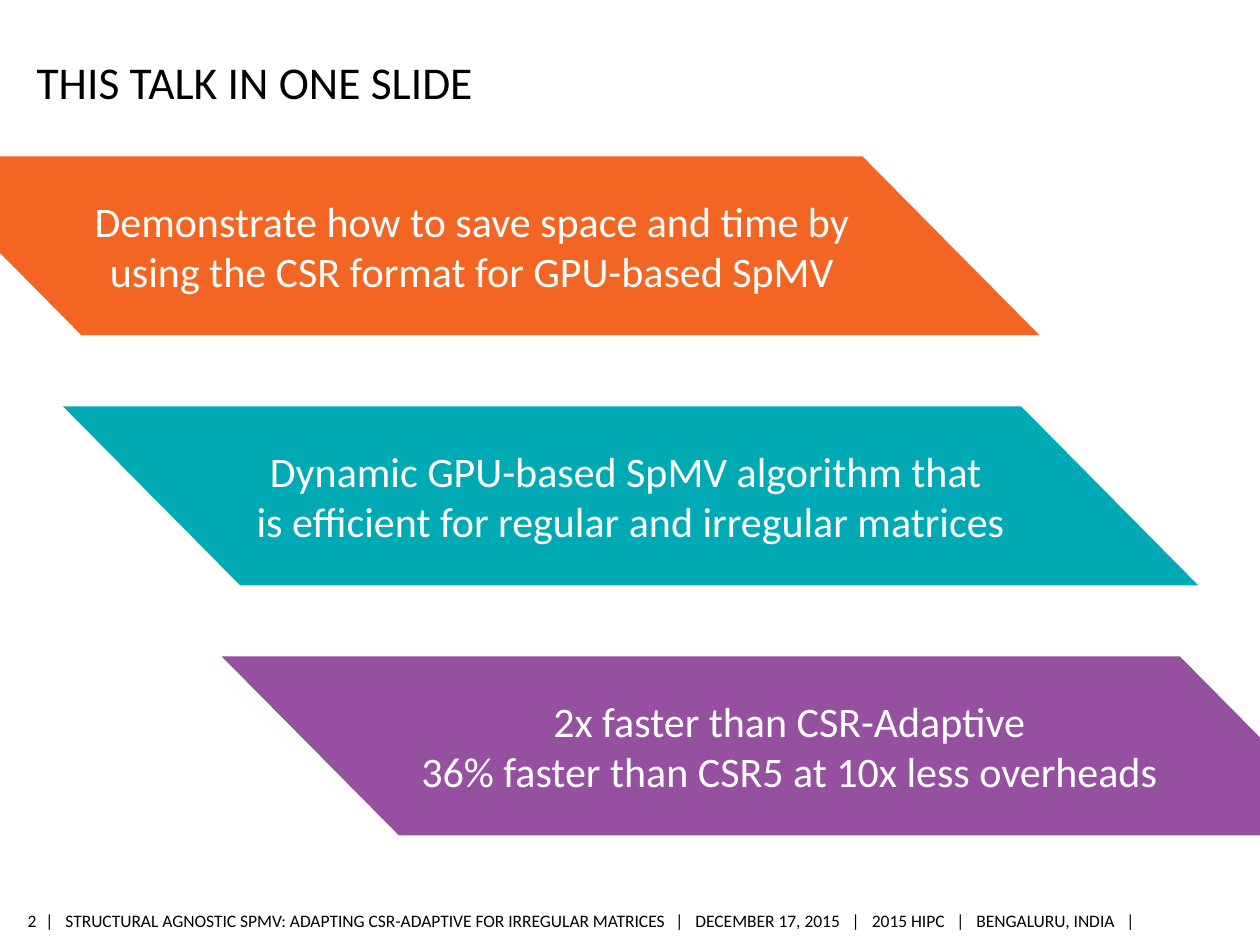
"""Build the one-slide summary of the SpMV talk."""
from lxml.etree import SubElement
from pptx import Presentation
from pptx.dml.color import RGBColor as RGB
from pptx.enum.shapes import MSO_SHAPE as Shape
from pptx.enum.text import MSO_ANCHOR as Anchor, PP_ALIGN as Align
from pptx.oxml.ns import qn
from pptx.util import Inches, Pt

BLACK = RGB(0x00, 0x00, 0x00)
WHITE = RGB(0xFF, 0xFF, 0xFF)
ORANGE = RGB(0xF2, 0x65, 0x22)
TEAL = RGB(0x00, 0xAA, 0xB5)
PURPLE = RGB(0x96, 0x50, 0xA0)


def add_run(para, text, size, color):
    run = para.add_run()
    run.text = text
    run.font.name = "Calibri"
    run.font.size = Pt(size)
    run.font.color.rgb = color


def set_frame(frame, anchor, top, bottom):
    frame.word_wrap = True
    frame.vertical_anchor = anchor
    frame.margin_left = frame.margin_right = 0
    frame.margin_top, frame.margin_bottom = Inches(top), Inches(bottom)


deck = Presentation()
deck.slide_width, deck.slide_height = Inches(10), Inches(7.5)
slide = deck.slides.add_slide(deck.slide_layouts[5])
shapes = slide.shapes

title = shapes.title
title.left, title.top = Inches(0.29), Inches(0.34)
title.width, title.height = Inches(8.4), Inches(0.52)
set_frame(title.text_frame, Anchor.BOTTOM, 0.05, 0)
para = title.text_frame.paragraphs[0]
para.alignment = Align.LEFT
add_run(para, "THIS TALK IN ONE SLIDE", 26, BLACK)

bands = [
    (ORANGE, ["Demonstrate how to save space and time by using the CSR format for GPU-based SpMV"]),
    (TEAL, ["Dynamic GPU-based SpMV algorithm that ", "is efficient for regular and irregular matrices"]),
    (PURPLE, ["2x faster than CSR-Adaptive", "36% faster than CSR5 at 10x less overheads"]),
]
for i, (color, lines) in enumerate(bands):
    band = shapes.add_shape(Shape.PARALLELOGRAM, Inches(-0.76 + 1.26 * i),
                            Inches(1.24 + 1.985 * i), Inches(9.01), Inches(1.42))
    band.adjustments[0] = 0.99
    band._element.spPr.find(qn("a:xfrm")).set("flipH", "1")
    band.shadow.inherit = False
    band.fill.solid()
    band.fill.fore_color.rgb = color
    band.line.fill.background()
    frame = band.text_frame
    frame.word_wrap = True
    frame.vertical_anchor = Anchor.MIDDLE
    for j, line in enumerate(lines):
        para = frame.add_paragraph() if j else frame.paragraphs[0]
        para.alignment = Align.CENTER
        add_run(para, line, 24, WHITE)

notes = [
    "|", "STRUCTURAL AGNOSTIC SPMV: ADAPTING CSR-ADAPTIVE FOR IRREGULAR MATRICES",
    "|", "DECEMBER 17, 2015", "|", "2015 HIPC", "|", "BENGALURU, INDIA", "|",
]
stops = [0.16, 5, 5.16, 6.4, 6.56, 7.23, 7.39, 8.58]
foot = shapes.add_textbox(Inches(0.36), Inches(7.18), Inches(8.73), Inches(0.26))
set_frame(foot.text_frame, Anchor.MIDDLE, 0.04, 0.04)
para = foot.text_frame.paragraphs[0]
tabs = SubElement(para._p.get_or_add_pPr(), qn("a:tabLst"))
for stop in stops:
    SubElement(tabs, qn("a:tab"), pos=str(Inches(stop)), algn="l")
add_run(para, "\t".join(notes), 10, BLACK)

page = shapes.add_textbox(Inches(0.13), Inches(7.18), Inches(0.16), Inches(0.26))
set_frame(page.text_frame, Anchor.MIDDLE, 0.04, 0.04)
para = page.text_frame.paragraphs[0]
para.alignment = Align.RIGHT
add_run(para, "2", 10, BLACK)

deck.save("out.pptx")
